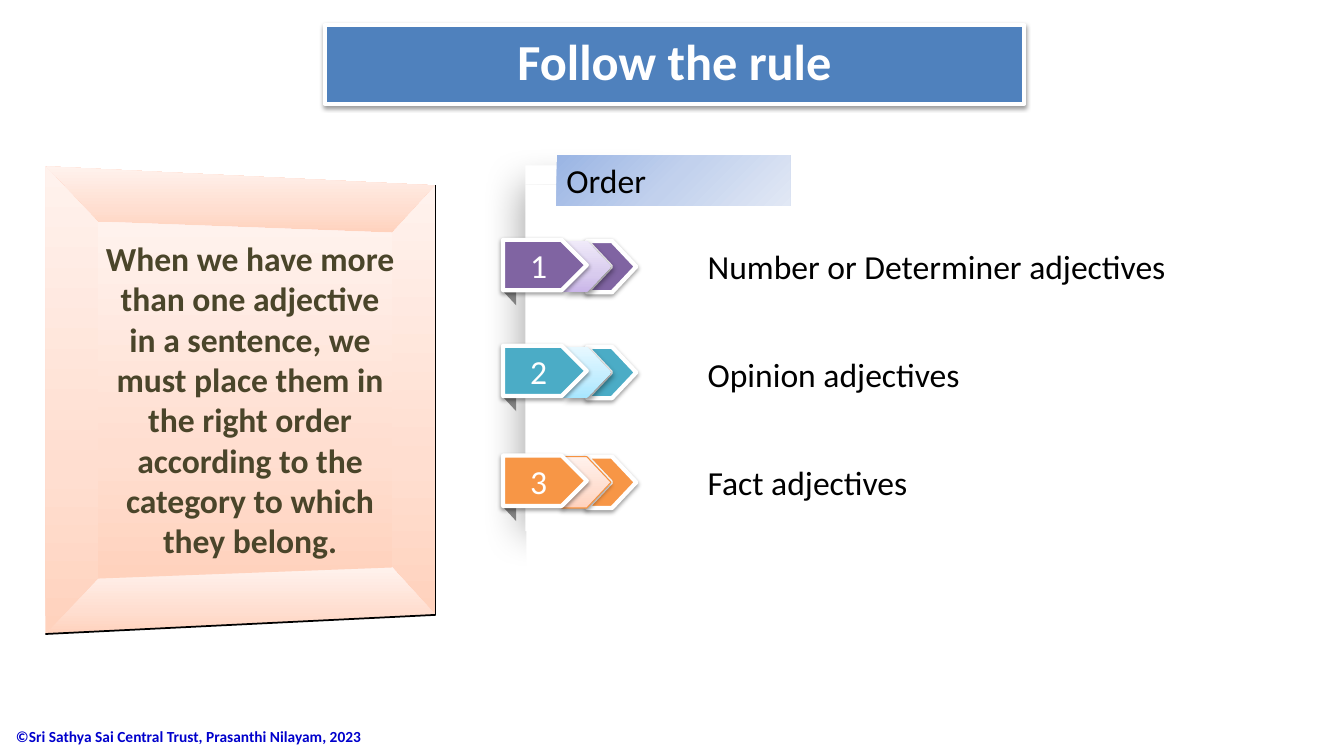
"""Build the slide on the order of adjectives."""
from dataclasses import dataclass, field
from typing import Optional

from lxml import etree
from pptx import Presentation
from pptx import util as u
from pptx.dml.color import RGBColor
from pptx.enum import shapes, text
from pptx.oxml.ns import qn

MSO = shapes.MSO_SHAPE
AL = text.PP_ALIGN
ANC = text.MSO_ANCHOR


@dataclass(frozen=True)
class Shadow:
    alpha: int
    blur: float
    dist: float
    angle: int


@dataclass(frozen=True)
class Theme:
    font: str = "Calibri"
    title_size: int = 36
    text_size: int = 24
    foot_size: int = 11
    black: str = "000000"
    white: str = "FFFFFF"
    blue: str = "4F81BD"
    fold: str = "808080"
    foot: str = "0000CC"
    olive: str = "4A452A"
    orange_line: str = "F69240"
    peach: tuple = ((0, "FFD2BD"), (35, "FFDED0"), (100, "FFF2ED"))
    lilac: tuple = ((0, "C9B5E8"), (35, "D8CBEE"), (100, "F0EAF9"))
    sky: tuple = ((0, "A7E6FF"), (35, "C1EDFF"), (100, "E7F8FF"))
    label: tuple = ((0, "9AB5E4"), (50, "C2D1ED"), (100, "E1E8F5"))
    raised: Shadow = Shadow(38, 3.1, 1.6, 90)
    soft: Shadow = Shadow(40, 4, 3, 45)
    page: Shadow = Shadow(32, 28, 3, 180)


T = Theme()


@dataclass(frozen=True)
class Style:
    fill: object
    line: Optional[str] = None
    width: float = 3
    shadow: Optional[Shadow] = None
    angle: int = 90


@dataclass(frozen=True)
class Words:
    content: str
    size: int = T.text_size
    color: str = T.black
    bold: bool = False
    align: AL = AL.LEFT
    anchor: ANC = ANC.TOP
    frame: dict = field(default_factory=dict)


@dataclass(frozen=True)
class Row:
    top: float
    color: str
    pale: tuple
    rule: str
    pale_line: Optional[str] = None
    pale_shadow: Shadow = T.soft


ROWS = (
    Row(2.38, "8064A2", T.lilac, "Number or Determiner adjectives"),
    Row(3.43, "4BACC6", T.sky, "Opinion adjectives"),
    Row(4.52, "F79646", T.peach, "Fact adjectives", T.orange_line, T.raised),
)
PAGE = ((5.21, 1.83, 1.38, 3.44), (5.21, 1.64, 1.58, 0.19),
        (5.22, 5.09, 1.75, 0.55), (5.92, 1.74, 1.04, 3.86))
OUTER = ((0.45, 1.65), (4.32, 1.84), (4.32, 6.1), (0.45, 6.29))
INNER = ((0.97, 2.2), (3.89, 2.31), (3.89, 5.63), (0.97, 5.74))
ADVICE = ("When we have more than one adjective in a sentence, we must place "
          "them in the right order according to the category to which they belong.")


def put(obj: object, values: dict) -> None:
    """Set every attribute in values on obj."""
    for name, value in values.items():
        setattr(obj, name, value)


def place(sp, box: tuple) -> None:
    """Move a shape to a box given in inches."""
    put(sp, dict(zip(("left", "top", "width", "height"), map(u.Inches, box))))


def color_node(parent, color: str):
    """Add an RGB colour element under parent."""
    return etree.SubElement(parent, qn("a:srgbClr"), val=color)


def paint(sp, style: Style) -> None:
    """Give a shape its fill, outline and shadow."""
    if isinstance(style.fill, str):
        sp.fill.solid()
        sp.fill.fore_color.rgb = RGBColor.from_string(style.fill)
    else:
        sp.fill.gradient()
        sp.fill.gradient_angle = style.angle
        stops = sp._element.spPr.find(".//" + qn("a:gsLst"))
        for stop in list(stops):
            stops.remove(stop)
        for position, color in style.fill:
            color_node(etree.SubElement(stops, qn("a:gs"), pos=str(position * 1000)), color)
    if style.line:
        sp.line.color.rgb = RGBColor.from_string(style.line)
        sp.line.width = u.Pt(style.width)
    else:
        sp.line.fill.background()
    sp.shadow.inherit = False
    if style.shadow:
        sh = style.shadow
        effects = sp._element.spPr.find(qn("a:effectLst"))
        outer = etree.SubElement(effects, qn("a:outerShdw"), blurRad=str(u.Pt(sh.blur)),
                                 dist=str(u.Pt(sh.dist)), dir=str(sh.angle * 60000),
                                 rotWithShape="0")
        etree.SubElement(color_node(outer, T.black), qn("a:alpha"), val=str(sh.alpha * 1000))


def write(sp, words: Words) -> None:
    """Write one formatted paragraph into a shape."""
    tf = sp.text_frame
    put(tf, {"word_wrap": True, "vertical_anchor": words.anchor, **words.frame})
    p = tf.paragraphs[0]
    p.alignment = words.align
    r = p.add_run()
    r.text = words.content
    put(r.font, {"name": T.font, "size": u.Pt(words.size), "bold": words.bold})
    r.font.color.rgb = RGBColor.from_string(words.color)


def draw(s, kind: MSO, box: tuple, style: Style):
    """Add a painted preset shape."""
    sp = s.shapes.add_shape(kind, *map(u.Inches, box))
    paint(sp, style)
    return sp


def label(s, box: tuple, words: Words):
    """Add a text box."""
    sp = s.shapes.add_textbox(*map(u.Inches, box))
    write(sp, words)
    return sp


def panel(s, points: tuple) -> None:
    """Add one peach face of the bevelled board."""
    corners = [(u.Inches(x), u.Inches(y)) for x, y in points]
    builder = s.shapes.build_freeform(*corners[0])
    builder.add_line_segments(corners[1:], close=True)
    paint(builder.convert_to_shape(), Style(T.peach))


def edge(s, start: tuple, end: tuple, width: float) -> None:
    """Add a dark edge of the board."""
    line = s.shapes.add_connector(shapes.MSO_CONNECTOR.STRAIGHT, *map(u.Inches, start + end))
    line.line.color.rgb = RGBColor.from_string(T.black)
    line.line.width = u.Pt(width)
    etree.SubElement(line._element.spPr, qn("a:effectLst"))


def draw_row(s, index: int, row: Row) -> None:
    """Draw a numbered arrow and its rule."""
    solid = Style(row.color, T.white, shadow=T.raised)
    pale = Style(row.pale, row.pale_line, 0.75, row.pale_shadow)
    draw(s, MSO.RIGHT_TRIANGLE, (4.99, row.top + 0.51, 0.13, 0.14), Style(T.fold)).rotation = 180
    for left, style in ((5.82, solid), (5.57, pale)):
        sp = draw(s, MSO.CHEVRON, (left, row.top + 0.01, 0.49, 0.51), style)
        sp.adjustments[0] = 0.49
    plate = draw(s, MSO.PENTAGON, (4.99, row.top, 0.83, 0.5), solid)
    write(plate, Words(str(index + 1), color=T.white, align=AL.CENTER, anchor=ANC.MIDDLE))
    sp = label(s, (6.86, 2.39 + 1.07 * index, 6, 0.5), Words(row.rule))
    pPr = sp.text_frame.paragraphs[0]._p.get_or_add_pPr()
    pPr.set("marL", str(u.Inches(0.62)))
    pPr.set("indent", str(u.Inches(-0.56)))


def main() -> None:
    """Build and save the slide."""
    prs = Presentation()
    put(prs, {"slide_width": u.Inches(13.33), "slide_height": u.Inches(7.5)})
    s = prs.slides.add_slide(prs.slide_layouts[5])
    label(s, (0.06, 7.1, 3.76, 0.41), Words(
        "©Sri Sathya Sai Central Trust, Prasanthi Nilayam, 2023",
        T.foot_size, T.foot, True, anchor=ANC.MIDDLE))
    for i, box in enumerate(PAGE):
        draw(s, MSO.RECTANGLE, box, Style(T.white, shadow=None if i else T.page))
    for i, row in enumerate(ROWS):
        draw_row(s, i, row)
    for i in range(4):
        j = (i + 1) % 4
        panel(s, (OUTER[i], OUTER[j], INNER[j], INNER[i]))
    panel(s, INNER)
    edge(s, OUTER[1], OUTER[2], 0.75)
    edge(s, OUTER[3], OUTER[2], 1.25)
    label(s, (0.94, 2.26, 3.08, 3.4), Words(
        ADVICE, color=T.olive, bold=True, align=AL.CENTER, anchor=ANC.MIDDLE))
    title = s.shapes.title
    place(title, (3.22, 0.25, 6.94, 0.78))
    paint(title, Style(T.blue, T.white, shadow=T.raised))
    write(title, Words("Follow the rule", T.title_size, T.white, True, AL.CENTER,
                       frame={"auto_size": text.MSO_AUTO_SIZE.NONE}))
    order = draw(s, MSO.RECTANGLE, (5.52, 1.54, 2.32, 0.5), Style(T.label, angle=315))
    write(order, Words("Order"))
    prs.save("out.pptx")


if __name__ == "__main__":
    main()
